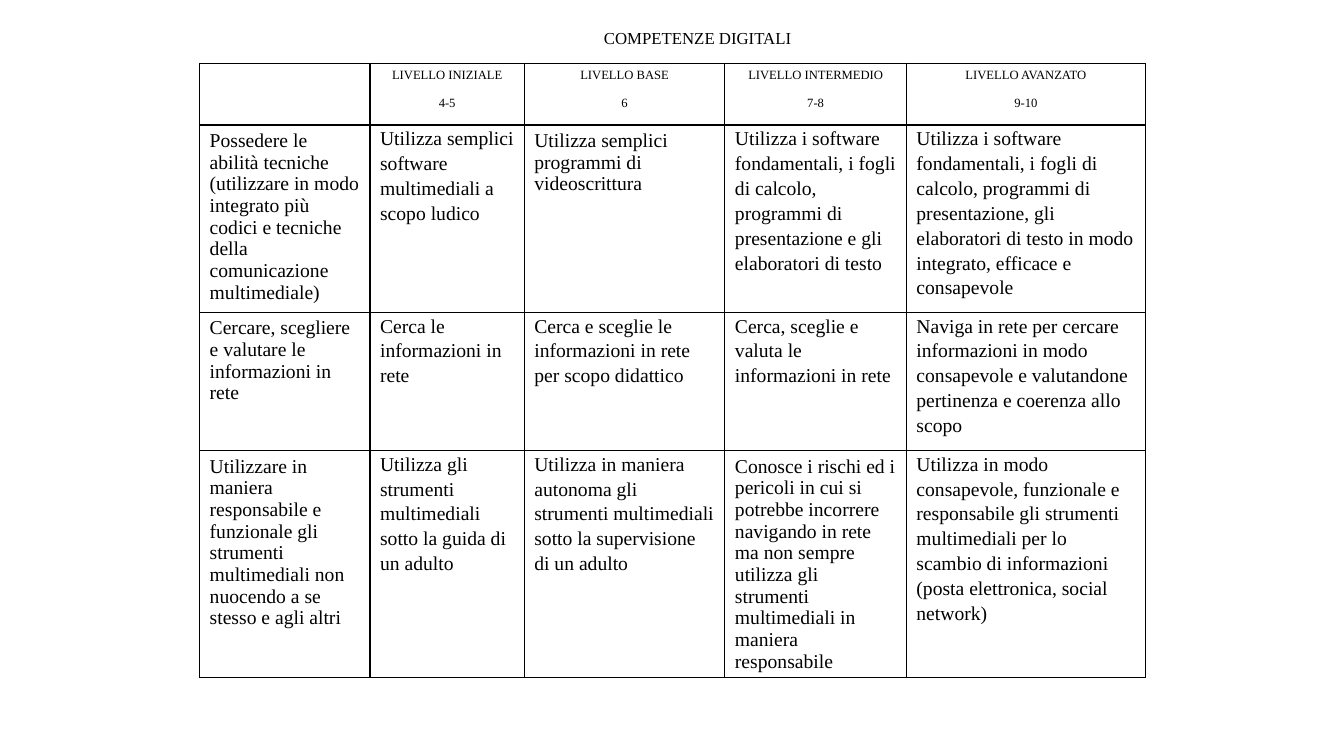
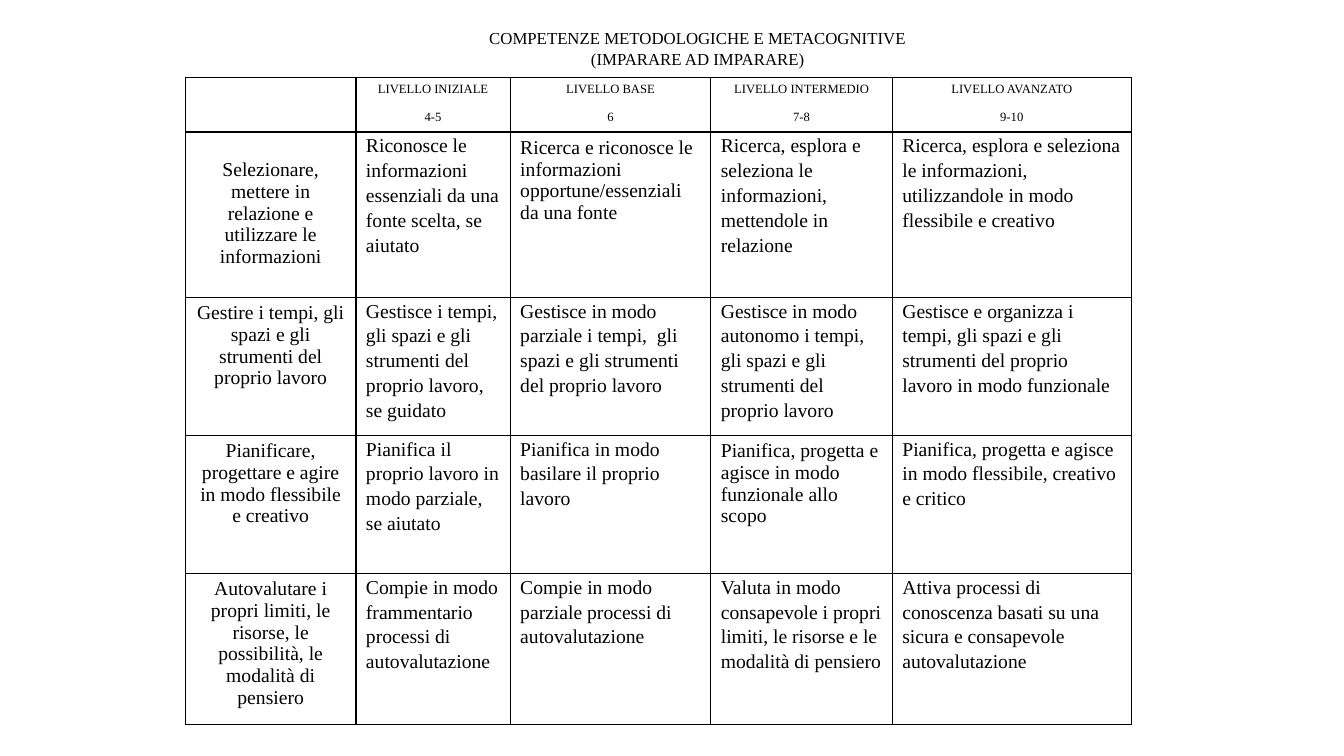
from lxml import etree
from pptx import Presentation
from pptx.dml.color import RGBColor
from pptx.enum.text import MSO_ANCHOR, PP_ALIGN
from pptx.oxml.ns import qn
from pptx.util import Inches, Pt

LEFT, CENTER = PP_ALIGN.LEFT, PP_ALIGN.CENTER
TOP = MSO_ANCHOR.TOP
FONT = "Times New Roman"
BLACK = "000000"
TITLE_SIZE, HEADER_SIZE, BODY_SIZE = 12, 9, 14

# Shared table design
COL_WIDTHS = [1.69, 1.53, 1.99, 1.8, 2.37]
LEVELS = [
    ("LIVELLO INIZIALE", "4-5"),
    ("LIVELLO BASE", "6"),
    ("LIVELLO INTERMEDIO", "7-8"),
    ("LIVELLO AVANZATO", "9-10"),
]
SINGLE_SPACED = {(1, 2), (3, 3)}  # descriptors set like the first column

DIGITAL_ROWS = [
    ["Possedere le abilità tecniche (utilizzare in modo integrato più codici e "
     "tecniche della comunicazione multimediale)",
     "Utilizza semplici software multimediali a scopo ludico",
     "Utilizza semplici programmi di videoscrittura",
     "Utilizza i software fondamentali, i fogli di calcolo, programmi di "
     "presentazione e gli elaboratori di testo",
     "Utilizza i software fondamentali, i fogli di calcolo, programmi di "
     "presentazione, gli elaboratori di testo in modo integrato, efficace e "
     "consapevole"],
    ["Cercare, scegliere e valutare le informazioni in rete",
     "Cerca le informazioni in rete",
     "Cerca e sceglie le informazioni in rete per scopo didattico",
     "Cerca, sceglie e valuta le informazioni in rete",
     "Naviga in rete per cercare informazioni in modo consapevole e "
     "valutandone pertinenza e coerenza allo scopo"],
    ["Utilizzare in maniera responsabile e funzionale gli strumenti "
     "multimediali non nuocendo a se stesso e agli altri",
     "Utilizza gli strumenti multimediali sotto la guida di un adulto",
     "Utilizza in maniera autonoma gli strumenti multimediali sotto la "
     "supervisione di un adulto",
     "Conosce i rischi ed i pericoli in cui si potrebbe incorrere navigando in "
     "rete ma non sempre utilizza gli strumenti multimediali in maniera "
     "responsabile",
     "Utilizza in modo consapevole, funzionale e responsabile gli strumenti "
     "multimediali per lo scambio di informazioni (posta elettronica, social "
     "network)"],
]

METHOD_ROWS = [
    ["Selezionare, mettere in relazione e utilizzare le informazioni",
     "Riconosce le informazioni essenziali da una fonte scelta, se aiutato",
     "Ricerca e riconosce le informazioni opportune/essenziali da una fonte",
     "Ricerca, esplora e seleziona le informazioni, mettendole in relazione",
     "Ricerca, esplora e seleziona le informazioni, utilizzandole in modo "
     "flessibile e creativo"],
    ["Gestire i tempi, gli spazi e gli strumenti del proprio lavoro",
     "Gestisce i tempi, gli spazi e gli strumenti del proprio lavoro, se guidato",
     "Gestisce in modo parziale i tempi,  gli spazi e gli strumenti del proprio "
     "lavoro",
     "Gestisce in modo autonomo i tempi, gli spazi e gli strumenti del proprio "
     "lavoro",
     "Gestisce e organizza i tempi, gli spazi e gli strumenti del proprio lavoro "
     "in modo funzionale"],
    ["Pianificare, progettare e agire in modo flessibile e creativo",
     "Pianifica il proprio lavoro in modo parziale, se aiutato",
     "Pianifica in modo basilare il proprio lavoro",
     "Pianifica, progetta e agisce in modo funzionale allo scopo",
     "Pianifica, progetta e agisce in modo flessibile, creativo e critico"],
    ["Autovalutare i propri limiti, le risorse, le possibilità, le modalità di "
     "pensiero",
     "Compie in modo frammentario processi di autovalutazione",
     "Compie in modo parziale processi di autovalutazione",
     "Valuta in modo consapevole i propri limiti, le risorse e le modalità di "
     "pensiero",
     "Attiva processi di conoscenza basati su una sicura e consapevole "
     "autovalutazione"],
]


def color(value):
    return RGBColor.from_string(value)


def add_run(p, text, size):
    r = p.add_run()
    r.text = text
    r.font.name = FONT
    r.font.size = Pt(size)
    r.font.color.rgb = color(BLACK)


def add_title(s, text, height):
    sp = s.shapes.add_textbox(Inches(4.4), Inches(0.23), Inches(5.04), Inches(height))
    tf = sp.text_frame
    tf.word_wrap = True
    p = tf.paragraphs[0]
    p.alignment = CENTER
    add_run(p, text, TITLE_SIZE)


def style_cell(cell):
    """Thin black border on every side, no fill."""
    tc_pr = cell._tc.get_or_add_tcPr()
    for side in ("a:lnL", "a:lnR", "a:lnT", "a:lnB"):
        ln = etree.SubElement(tc_pr, qn(side), w=str(Pt(1)))
        fill = etree.SubElement(ln, qn("a:solidFill"))
        etree.SubElement(fill, qn("a:srgbClr"), val=BLACK)
    cell.fill.background()
    cell.vertical_anchor = TOP


def fill_header(cell, level, marks):
    tf = cell.text_frame
    p = tf.paragraphs[0]
    p.alignment = CENTER
    add_run(p, level, HEADER_SIZE)
    p = tf.add_paragraph()
    p.alignment = CENTER
    p.space_before = Pt(10)
    add_run(p, marks, HEADER_SIZE)


def fill_body(cell, text, align, loose):
    p = cell.text_frame.paragraphs[0]
    p.alignment = align
    if loose:
        cell.margin_top = cell.margin_bottom = 0
        p.line_spacing = 1.15
        p.space_after = Pt(10)
    add_run(p, text, BODY_SIZE)


def add_rubric(s, left, top, heights, rows, first_align):
    frame = s.shapes.add_table(len(heights), len(COL_WIDTHS), Inches(left), Inches(top),
                               Inches(sum(COL_WIDTHS)), Inches(sum(heights)))
    table = frame.table
    table.first_row = table.horz_banding = False
    for column, width in zip(table.columns, COL_WIDTHS):
        column.width = Inches(width)
    for row, height in zip(table.rows, heights):
        row.height = Inches(height)
    for cell in table.iter_cells():
        style_cell(cell)
    # Level headings
    for j, (level, marks) in enumerate(LEVELS, 1):
        fill_header(table.cell(0, j), level, marks)
    # Skills and their descriptors
    for i, texts in enumerate(rows, 1):
        for j, text in enumerate(texts):
            loose = j > 0 and (i, j) not in SINGLE_SPACED
            fill_body(table.cell(i, j), text, LEFT if j else first_align, loose)
    return table


def main():
    prs = Presentation()
    prs.slide_width, prs.slide_height = Inches(13.33), Inches(7.5)
    blank = prs.slide_layouts[6]

    # Digital skills
    s = prs.slides.add_slide(blank)
    add_rubric(s, 1.98, 0.63, [0.61, 1.86, 1.37, 2.25], DIGITAL_ROWS, LEFT)
    add_title(s, "COMPETENZE DIGITALI", 0.3)

    # Learning skills
    s = prs.slides.add_slide(blank)
    table = add_rubric(s, 1.84, 0.77, [0.51, 1.64, 1.37, 1.37, 1.39], METHOD_ROWS, CENTER)
    table.cell(1, 0).margin_top = Inches(0.27)
    add_title(s, "COMPETENZE METODOLOGICHE E METACOGNITIVE (IMPARARE AD IMPARARE)", 0.5)

    prs.save("out.pptx")


if __name__ == "__main__":
    main()
